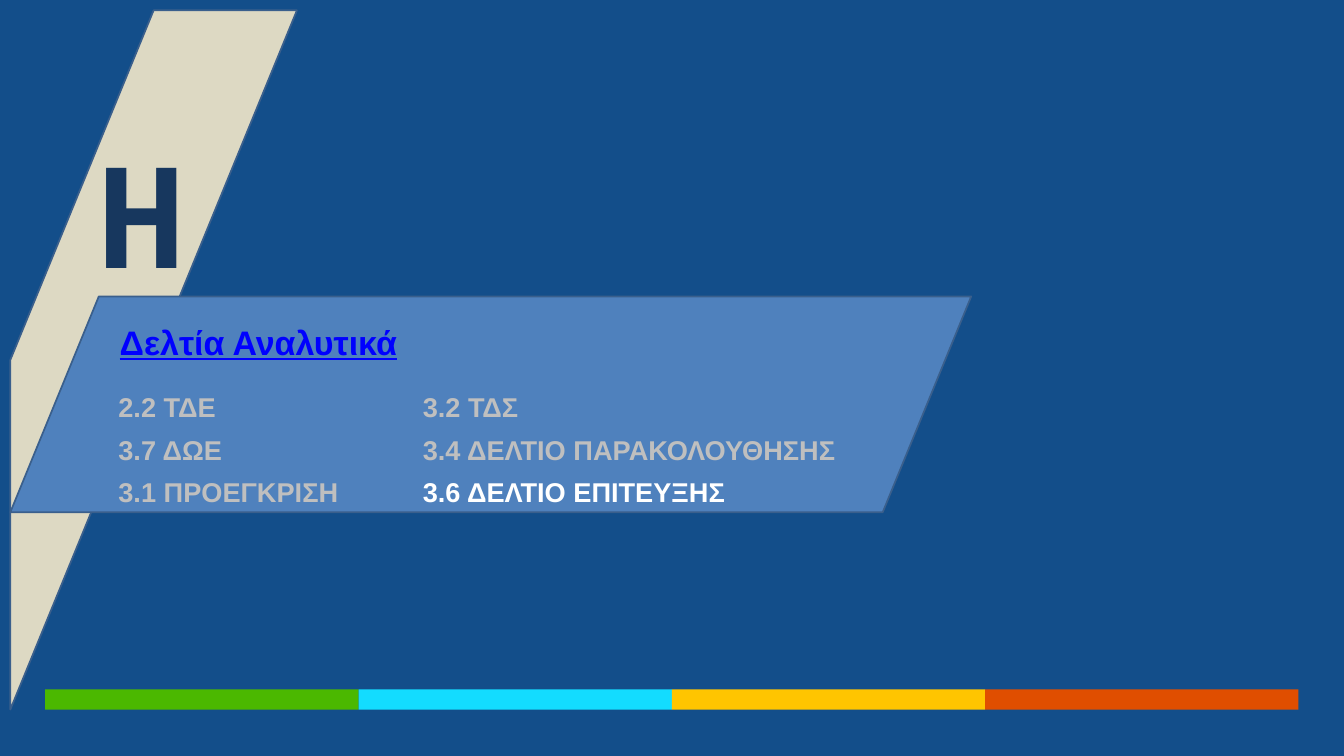
from pptx import Presentation
from pptx.dml.color import RGBColor
from pptx.enum import shapes, text
from pptx.util import Cm, Pt

# Content
SECTION_LETTER = "Η"
HEADING = "Δελτία Αναλυτικά"
CURRENT_FORM = "3.6 ΔΕΛΤΙΟ ΕΠΙΤΕΥΞΗΣ"
FORM_COLUMNS = [  # left, width, forms
    (3.4, 12.3, ["2.2 ΤΔΕ", "3.7 ΔΩΕ", "3.1 ΠΡΟΕΓΚΡΙΣΗ"]),
    (16.05, 19.75, ["3.2 ΤΔΣ", "3.4 ΔΕΛΤΙΟ ΠΑΡΑΚΟΛΟΥΘΗΣΗΣ", CURRENT_FORM]),
]

# Colours
BACKGROUND = RGBColor(0x13, 0x4E, 0x8A)
SAND = RGBColor(0xDD, 0xD9, 0xC3)
PANEL = RGBColor(0x4F, 0x81, 0xBD)
OUTLINE = RGBColor(0x3A, 0x5F, 0x8C)
NAVY = RGBColor(0x17, 0x37, 0x5E)
LINK_BLUE = RGBColor(0x00, 0x00, 0xFF)
GREY = RGBColor(0xBF, 0xBF, 0xBF)
WHITE = RGBColor(0xFF, 0xFF, 0xFF)
BAND_COLOURS = [
    RGBColor(0x4B, 0xB8, 0x00),
    RGBColor(0x13, 0xDC, 0xFF),
    RGBColor(0xFF, 0xC5, 0x00),
    RGBColor(0xE0, 0x4E, 0x00),
]

# Band geometry in centimetres
BAND_LEFT, BAND_TOP, BAND_WIDTH, BAND_HEIGHT = 1.88, 28.65, 13.02, 0.84


def add_block(slide, preset, left, top, width, height, fill, outline=None):
    block = slide.shapes.add_shape(preset, Cm(left), Cm(top), Cm(width), Cm(height))
    block.shadow.inherit = False
    block.fill.solid()
    block.fill.fore_color.rgb = fill
    if outline is None:
        block.line.fill.background()
    else:
        block.line.color.rgb = outline
        block.line.width = Pt(2)
    return block


def add_text_frame(slide, left, top, width, height):
    frame = slide.shapes.add_textbox(Cm(left), Cm(top), Cm(width), Cm(height)).text_frame
    frame.word_wrap = True
    return frame


def style(paragraph, size, colour, name="Arial"):
    font = paragraph.font
    font.name, font.size, font.bold = name, Pt(size), True
    font.color.rgb = colour


def main():
    prs = Presentation()
    prs.slide_width, prs.slide_height = Cm(55.85), Cm(31.42)
    slide = prs.slides.add_slide(prs.slide_layouts[5])
    slide.background.fill.solid()
    slide.background.fill.fore_color.rgb = BACKGROUND

    # Diagonal stripe, colour band and panel
    preset = shapes.MSO_SHAPE
    add_block(slide, preset.DIAGONAL_STRIPE, 0.43, 0.43, 11.91, 29.06, SAND, OUTLINE)
    for i, colour in enumerate(BAND_COLOURS):
        add_block(slide, preset.RECTANGLE, BAND_LEFT + i * BAND_WIDTH, BAND_TOP,
                  BAND_WIDTH, BAND_HEIGHT, colour)
    panel = add_block(slide, preset.PARALLELOGRAM, 0.43, 12.32, 39.93, 8.97, PANEL, OUTLINE)
    panel.adjustments[0] = 0.41

    # Section letter
    letter = add_text_frame(slide, 3.81, 5.18, 4.14, 7.34).paragraphs[0]
    letter.text = SECTION_LETTER
    letter.alignment = text.PP_ALIGN.CENTER
    style(letter, 166, NAVY, "Roboto Condensed")

    # Heading, brought in front of the panel
    title = slide.shapes.title
    panel._element.addnext(title._element)
    title.left, title.top, title.width, title.height = Cm(4.72), Cm(12.73), Cm(33.25), Cm(2.26)
    title.text_frame.text = HEADING
    title.text_frame.auto_size = text.MSO_AUTO_SIZE.NONE
    title.text_frame.vertical_anchor = text.MSO_ANCHOR.TOP
    heading = title.text_frame.paragraphs[0]
    heading.alignment = text.PP_ALIGN.LEFT
    heading.line_spacing = 1.3
    style(heading, 40, LINK_BLUE)
    heading.font.underline = True

    # Two columns of forms, the current one highlighted
    for left, width, forms in FORM_COLUMNS:
        column = add_text_frame(slide, left, 15.7, width, 5.44)
        column.margin_left = Cm(1.52)
        column.text = "\n".join(forms)
        for form in column.paragraphs:
            form.line_spacing = 1.3
            style(form, 32, WHITE if form.text == CURRENT_FORM else GREY)

    prs.save("out.pptx")


if __name__ == "__main__":
    main()
